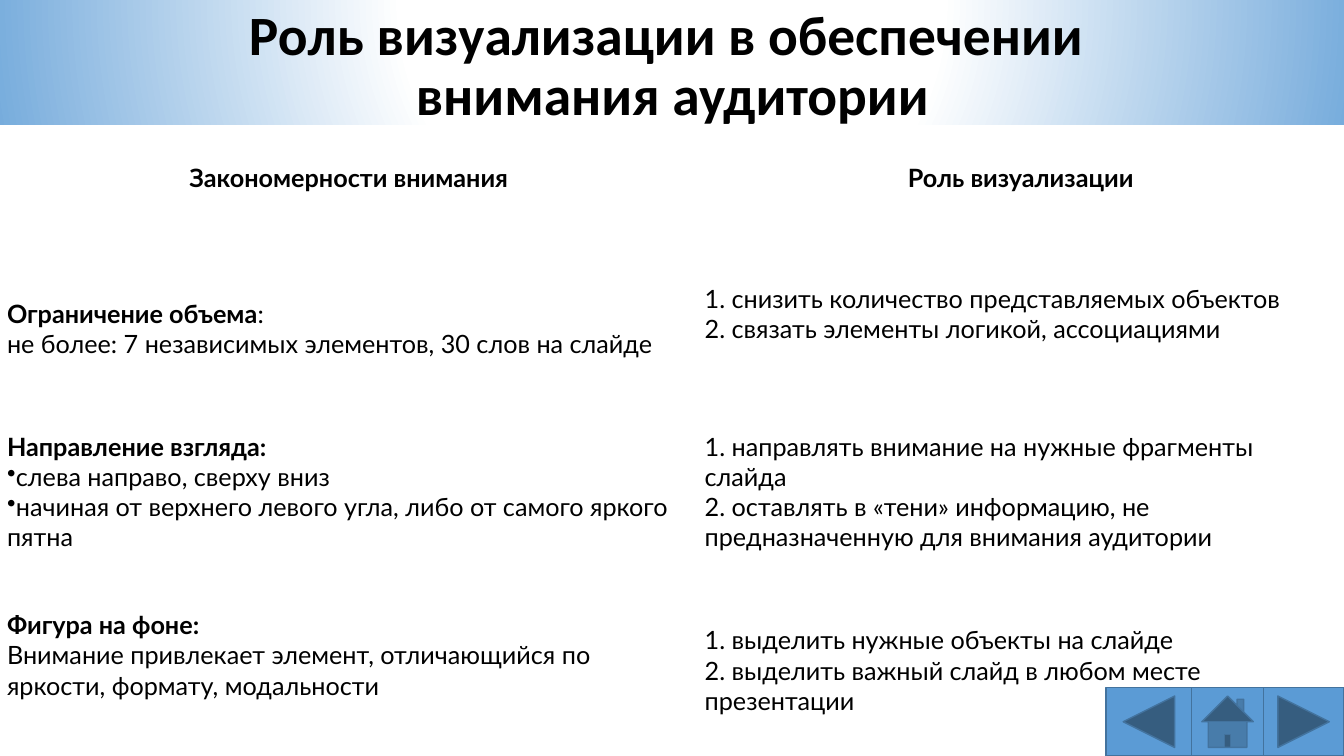
from pptx import Presentation
from pptx import util as u
from pptx.dml.color import RGBColor
from pptx.enum import shapes, text
from pptx.oxml import parse_xml
from pptx.oxml.ns import nsdecls, qn
from lxml import etree

BLUE, EDGE, WHITE, BLACK = "5B9BD5", "43739E", "FFFFFF", "000000"
LINE_HEIGHT = 0.3

# Each cell is a list of paragraphs; each paragraph is a list of (text, bold) runs.
HEADINGS = [[[("Закономерности внимания", True)]], [[("Роль визуализации", True)]]]
VOLUME = [
    [[("Ограничение объема", True), (":", False)],
     [("не более: 7 независимых элементов, 30 слов на слайде", False)]],
    [[("1. снизить количество представляемых объектов", False)],
     [("2. связать элементы логикой, ассоциациями", False)]],
]
GAZE = [
    [[("Направление взгляда:", True)],
     [("•", False), ("слева направо, сверху вниз", False)],
     [("•", False), ("начиная от верхнего левого угла, либо от самого яркого пятна", False)]],
    [[("1. направлять внимание на нужные фрагменты слайда", False)],
     [("2. оставлять в «тени» информацию, не предназначенную для внимания аудитории", False)]],
]
FIGURE = [
    [[("Фигура на фоне:", True)],
     [("Внимание привлекает элемент, отличающийся по яркости, формату, модальности", False)]],
    [[("1. выделить нужные объекты на слайде", False)],
     [("2. выделить важный слайд в любом месте презентации", False)]],
]
ROWS = [(1.02, HEADINGS), (1.68, VOLUME), (1.86, GAZE), (1.68, FIGURE)]


def color(hex_value):
    return RGBColor.from_string(hex_value)


def add_run(paragraph, words, font, size, bold):
    run = paragraph.add_run()
    run.text = words
    run.font.name = font
    run.font.size = u.Pt(size)
    run.font.bold = bold
    run.font.color.rgb = color(BLACK)


def set_background(slide):
    """White centre above the slide fading to blue at the top corners."""
    stops = "".join(
        f'<a:gs pos="{position * 1000}"><a:srgbClr val="{shade}"/></a:gs>'
        for position, shade in [(0, WHITE), (35, WHITE), (100, BLUE)])
    background = parse_xml(
        f'<p:bg {nsdecls("p", "a")}><p:bgPr><a:gradFill rotWithShape="1">'
        f'<a:gsLst>{stops}</a:gsLst><a:path path="circle">'
        '<a:fillToRect l="50000" t="-80000" r="50000" b="180000"/></a:path>'
        '</a:gradFill><a:effectLst/></p:bgPr></p:bg>')
    slide.element.cSld.insert(0, background)


def add_title(slide, lines):
    box = slide.shapes.add_textbox(u.Inches(0.92), 0, u.Inches(11.5), u.Inches(1.34))
    frame = box.text_frame
    frame.word_wrap = True
    frame.vertical_anchor = text.MSO_ANCHOR.MIDDLE
    paragraph = frame.paragraphs[0]
    paragraph.alignment = text.PP_ALIGN.CENTER
    paragraph.line_spacing = 0.9
    for index, line in enumerate(lines):
        if index:
            paragraph.add_line_break()
        add_run(paragraph, line, "Calibri", 39.6, True)


def add_bullet(paragraph):
    properties = paragraph._p.get_or_add_pPr()
    properties.set("marL", "0")
    properties.set("indent", "0")
    etree.SubElement(properties, qn("a:buChar")).set("char", "•")


def fill_cell(cell, paragraphs, alignment):
    cell.fill.solid()
    cell.fill.fore_color.rgb = color(WHITE)
    cell.vertical_anchor = text.MSO_ANCHOR.MIDDLE
    cell.margin_left = cell.margin_right = u.Inches(0.07)
    cell.margin_top = cell.margin_bottom = u.Inches(0.03)
    for index, runs in enumerate(paragraphs):
        frame = cell.text_frame
        paragraph = frame.add_paragraph() if index else frame.paragraphs[0]
        paragraph.alignment = alignment
        if runs[0][0] == "•":
            add_bullet(paragraph)
            runs = runs[1:]
        for words, bold in runs:
            add_run(paragraph, words, "Lato", 18, bold)


def add_attention_table(slide):
    table = slide.shapes.add_table(
        len(ROWS), 2, 0, u.Inches(1.25), u.Inches(13.33), u.Inches(6.25)).table
    table.first_row = table.horz_banding = False
    for column, width in zip(table.columns, (6.92, 6.41)):
        column.width = u.Inches(width)
    for row_index, (height, cells) in enumerate(ROWS):
        table.rows[row_index].height = u.Inches(height)
        alignment = text.PP_ALIGN.LEFT if row_index else text.PP_ALIGN.CENTER
        for column_index, paragraphs in enumerate(cells):
            fill_cell(table.cell(row_index, column_index), paragraphs, alignment)
    # One line of free space shifts these two cells off the row's middle.
    table.cell(1, 0).margin_top = u.Inches(0.03 + LINE_HEIGHT)
    table.cell(3, 0).margin_bottom = u.Inches(0.03 + LINE_HEIGHT)


def add_navigation(slide):
    left = 10.97
    for preset, width in [("BACK_OR_PREVIOUS", 0.85), ("HOME", 0.71),
                          ("FORWARD_OR_NEXT", 0.8)]:
        button = slide.shapes.add_shape(
            shapes.MSO_SHAPE[f"ACTION_BUTTON_{preset}"],
            u.Inches(left), u.Inches(6.82), u.Inches(width), u.Inches(0.68))
        button.shadow.inherit = False
        button.fill.solid()
        button.fill.fore_color.rgb = color(BLUE)
        button.line.color.rgb = color(EDGE)
        button.line.width = u.Pt(1)
        left += width


def main():
    deck = Presentation()
    deck.slide_width, deck.slide_height = u.Inches(13.33), u.Inches(7.5)
    slide = deck.slides.add_slide(deck.slide_layouts[6])
    set_background(slide)
    add_title(slide, ["Роль визуализации в обеспечении ", "внимания аудитории"])
    add_attention_table(slide)
    add_navigation(slide)
    deck.save("out.pptx")


if __name__ == "__main__":
    main()
